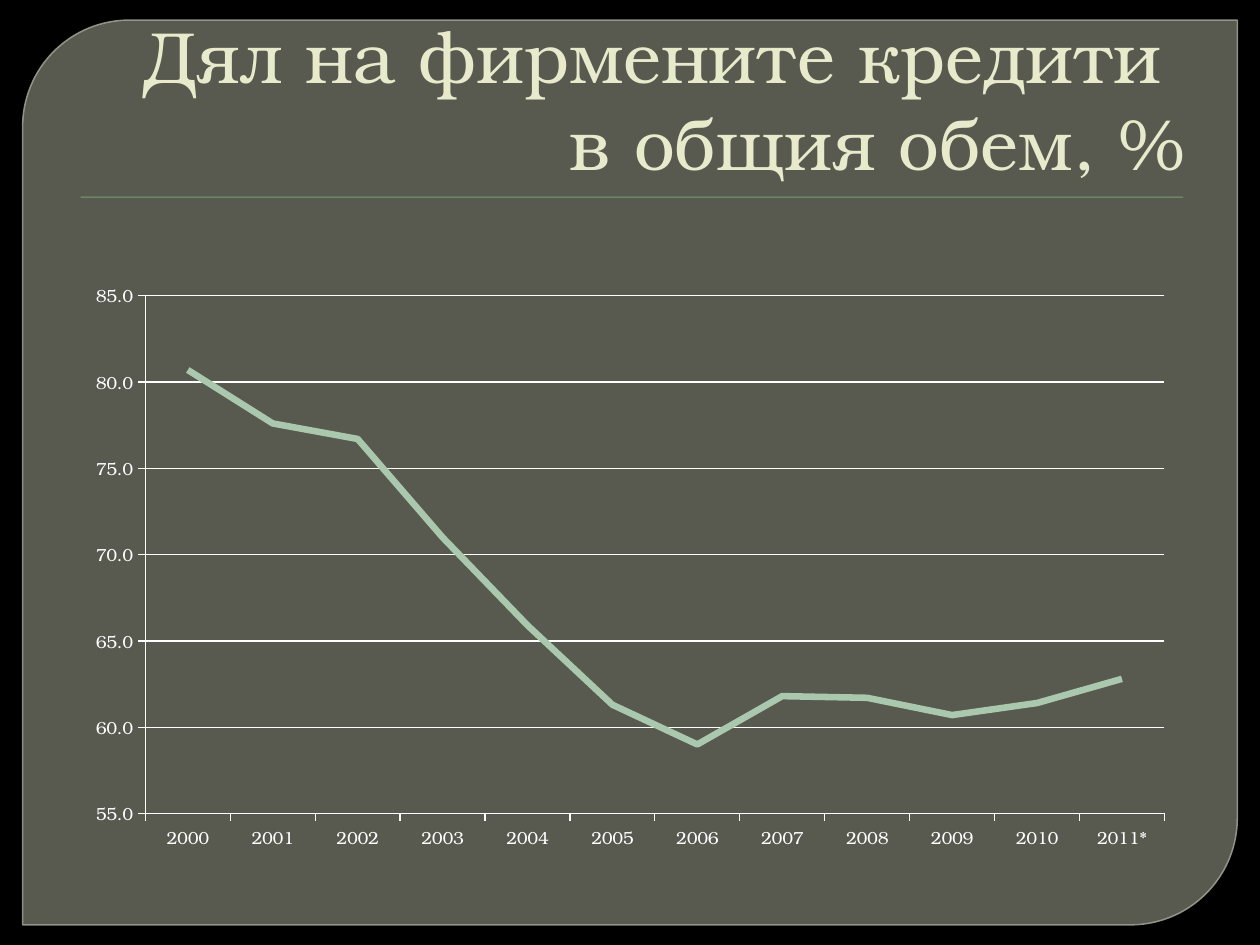
"""Build a slide with a line chart of the share of company loans."""
from lxml import etree
from pptx import Presentation
from pptx.chart.data import CategoryChartData
from pptx.dml.color import RGBColor
from pptx.enum.chart import XL_CHART_TYPE, XL_TICK_MARK
from pptx.enum.shapes import MSO_SHAPE
from pptx.enum.text import MSO_ANCHOR, PP_ALIGN
from pptx.oxml import parse_xml
from pptx.oxml.ns import nsdecls, qn
from pptx.util import Inches, Pt

LINE = XL_CHART_TYPE.LINE
OUTSIDE = XL_TICK_MARK.OUTSIDE
PANEL = MSO_SHAPE.ROUND_2_DIAG_RECTANGLE
RECT = MSO_SHAPE.RECTANGLE
BOTTOM = MSO_ANCHOR.BOTTOM
RIGHT = PP_ALIGN.RIGHT
FONT = "TeX Gyre Bonum"
COLORS = {
    "back": "000000", "panel": "888B7B", "border": "9DA090", "rule": "72A376",
    "title": "E7EACB", "axis": "FFFFFF", "series": "AAC8AD",
}
YEARS = [str(year) for year in range(2000, 2011)] + ["2011*"]
SHARES = [80.7, 77.6, 76.7, 71, 65.9, 61.3, 59, 61.8, 61.7, 60.7, 61.4, 62.8]


def rgb(name):
    return RGBColor.from_string(COLORS[name])


def set_alpha(fill_xml, percent):
    color = fill_xml.find(".//" + qn("a:srgbClr"))
    etree.SubElement(color, qn("a:alpha")).set("val", str(percent * 1000))


prs = Presentation()
prs.slide_width, prs.slide_height = Inches(10), Inches(7.5)
s = prs.slides.add_slide(prs.slide_layouts[6])
s.background.fill.solid()
s.background.fill.fore_color.rgb = rgb("back")

sp = s.shapes.add_shape(PANEL, Inches(0.18), Inches(0.16), Inches(9.64), Inches(7.18))
sp.shadow.inherit = False
sp.adjustments[0], sp.adjustments[1] = 0.118, 0
sp.fill.solid()
sp.fill.fore_color.rgb = rgb("panel")
sp.line.color.rgb = rgb("border")
sp.line.width = Pt(0.87)
set_alpha(sp.element.spPr.find(qn("a:solidFill")), 65)
set_alpha(sp.element.spPr.find(qn("a:ln")), 88)

sp = s.shapes.add_shape(RECT, Inches(0.64), Inches(1.56), Inches(8.75), Inches(0.01))
sp.shadow.inherit = False
sp.fill.solid()
sp.fill.fore_color.rgb = rgb("rule")
sp.line.fill.background()

sp = s.shapes.add_textbox(Inches(0.5), Inches(0.33), Inches(9), Inches(1.19))
tf = sp.text_frame
tf.word_wrap = True
tf.vertical_anchor = BOTTOM
p = tf.paragraphs[0]
p.text = "Дял на фирмените кредити \vв общия обем, %"
p.alignment = RIGHT
for r in p.runs:
    r.font.name = FONT
    r.font.size = Pt(41.4)
    r.font.color.rgb = rgb("title")

data = CategoryChartData(number_format="0.0")
data.categories = YEARS
data.add_series("Series 1", SHARES)
chart = s.shapes.add_chart(
    LINE, Inches(0.58), Inches(2.17), Inches(8.83), Inches(4.67), data).chart
chart.has_legend = False
chart.has_title = False
chart.font.name = FONT
chart.font.size = Pt(10)
chart.font.color.rgb = rgb("axis")

for axis in (chart.category_axis, chart.value_axis):
    axis.major_tick_mark = OUTSIDE
    axis.format.line.color.rgb = rgb("axis")
    axis.format.line.width = Pt(0.75)

axis = chart.value_axis
axis.minimum_scale, axis.maximum_scale, axis.major_unit = 55, 85, 5
axis.tick_labels.number_format = "0.0"
axis.tick_labels.number_format_is_linked = False
axis.has_major_gridlines = True
axis.major_gridlines.format.line.color.rgb = rgb("axis")
axis.major_gridlines.format.line.width = Pt(0.75)

plot = chart.plots[0]
plot.vary_by_categories = False
series = plot.series[0]
series.smooth = False
series.format.line.color.rgb = rgb("series")
series.format.line.width = Pt(3.75)
series.marker.style = None
series.marker.format.fill.background()

area = chart.element.find(".//" + qn("c:plotArea"))
for old in area.findall(qn("c:layout")):
    area.remove(old)
area.insert(0, parse_xml(
    f'<c:layout {nsdecls("c")}><c:manualLayout><c:layoutTarget val="inner"/>'
    '<c:xMode val="edge"/><c:yMode val="edge"/><c:x val="0.065"/><c:y val="0.038"/>'
    '<c:w val="0.916"/><c:h val="0.88"/></c:manualLayout></c:layout>'))
marker = area.find(".//" + qn("c:ser")).find(qn("c:marker"))
for child in list(marker):
    marker.remove(child)
etree.SubElement(marker, qn("c:symbol")).set("val", "none")

prs.save("out.pptx")
